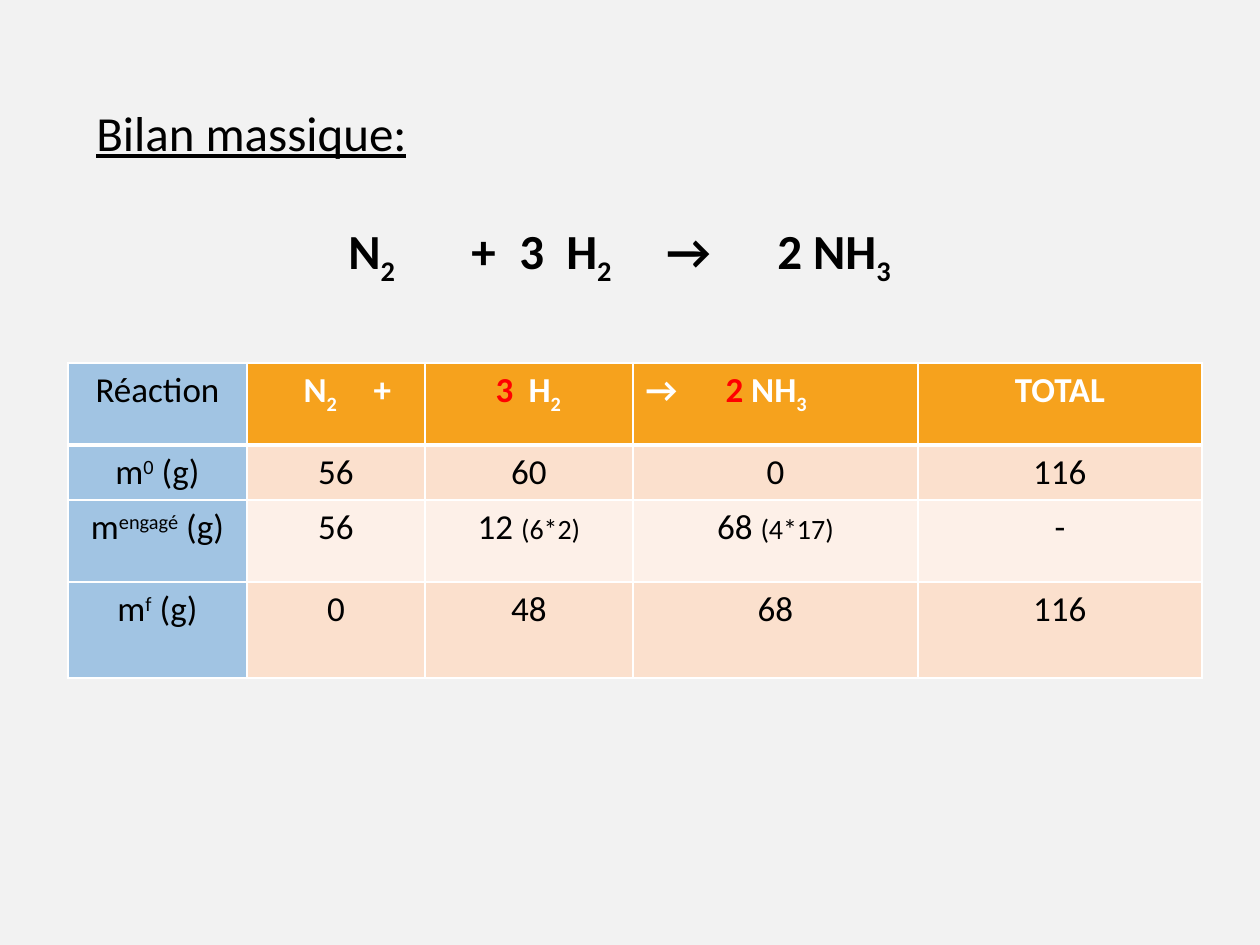
from lxml.etree import SubElement
from pptx import Presentation
from pptx.dml.color import RGBColor
from pptx.enum.text import PP_ALIGN
from pptx.oxml.ns import qn
from pptx.util import Pt

PX = 914400 // 126
FONT = "Calibri"
COLORS = {
    "background": "F2F2F2", "black": "000000", "white": "FFFFFF", "red": "FF0000",
    "label": "A1C4E3", "header": "F6A21D", "odd": "FBE0CD", "even": "FDF0E8",
}
SUB, SUPER = {"baseline": -25}, {"baseline": 30}
RED, SMALL = {"color": "red"}, {"size": 16}

COLUMN_WIDTHS = [179, 178, 208, 285, 284]
ROW_HEIGHTS = [82, 55, 82, 96]

# Each header cell: its runs, then its tab stops in px (none means centred).
HEADER = [
    ([("Réaction", {})], []),
    ([("\tN", {}), ("2", SUB), ("\t+", {})], [44, 114]),
    ([("\t3", RED), ("\tH", {}), ("2", SUB)], [58, 91]),
    ([("→", {}), ("\t2 ", RED), ("NH", {}), ("3", SUB)], [80]),
    ([("TOTAL", {})], []),
]
BODY = [
    [[("m", {}), ("0", SUPER), (" (g)", {})], "56", "60", "0", "116"],
    [[("m", {}), ("engagé", SUPER), (" (g)", {})], "56",
     [("12 ", {}), ("(6*2)", SMALL)], [("68 ", {}), ("(4*17)", SMALL)], "-"],
    [[("m", {}), ("f", SUPER), (" (g)", {})], "0", "48", "68", "116"],
]


def rgb(name):
    return RGBColor.from_string(COLORS[name])


def add_runs(paragraph, runs, size, color="black", bold=False, underline=False):
    """Add (text, style) runs; a style may change size, color or baseline."""
    for text, style in runs:
        run = paragraph.add_run()
        run.text = text
        font = run.font
        font.name = FONT
        font.size = Pt(style.get("size", size))
        font.bold = bold
        font.underline = underline
        font.color.rgb = rgb(style.get("color", color))
        if "baseline" in style:
            font._element.set("baseline", str(style["baseline"] * 1000))


def set_tab_stops(paragraph, stops):
    tab_list = SubElement(paragraph._p.get_or_add_pPr(), qn("a:tabLst"))
    for stop in stops:
        SubElement(tab_list, qn("a:tab"), pos=str(stop * PX), algn="l")


def set_borders(cell, bottom_width):
    """Draw white borders, 1 pt wide except for the bottom one."""
    properties = cell._tc.get_or_add_tcPr()
    for index, side in enumerate(("L", "R", "T", "B")):
        width = bottom_width if side == "B" else 1
        line = properties.makeelement(qn(f"a:ln{side}"), {"w": str(Pt(width))})
        fill = SubElement(line, qn("a:solidFill"))
        SubElement(fill, qn("a:srgbClr"), val=COLORS["white"])
        properties.insert(index, line)


def add_heading(slide, left, top, width, height):
    box = slide.shapes.add_textbox(left * PX, top * PX, width * PX, height * PX)
    frame = box.text_frame
    frame.word_wrap = True
    add_runs(frame.paragraphs[0], [("Bilan massique:", {})], 28, underline=True)

    equation = frame.add_paragraph()
    equation.space_before = Pt(34)
    set_tab_stops(equation, [252, 375, 423, 470, 570, 681])
    add_runs(equation, [("\tN", {}), ("2", SUB), ("\t+\t3\tH", {}), ("2", SUB),
                        ("\t→\t2 NH", {}), ("3", SUB)], 28, bold=True)


def fill_cell(cell, content, fill, color="black", bold=False, stops=(), bottom_width=1):
    cell.fill.solid()
    cell.fill.fore_color.rgb = rgb(fill)
    set_borders(cell, bottom_width)
    paragraph = cell.text_frame.paragraphs[0]
    if stops:
        set_tab_stops(paragraph, stops)
    else:
        paragraph.alignment = PP_ALIGN.CENTER
    runs = [(content, {})] if isinstance(content, str) else content
    add_runs(paragraph, runs, 20, color, bold)


def add_mass_table(slide, left, top):
    frame = slide.shapes.add_table(
        len(ROW_HEIGHTS), len(COLUMN_WIDTHS), left * PX, top * PX,
        sum(COLUMN_WIDTHS) * PX, sum(ROW_HEIGHTS) * PX)
    table = frame.table
    for column, width in zip(table.columns, COLUMN_WIDTHS):
        column.width = width * PX
    for row, height in zip(table.rows, ROW_HEIGHTS):
        row.height = height * PX

    for column, (runs, stops) in enumerate(HEADER):
        is_label = column == 0
        fill_cell(table.cell(0, column), runs, "label" if is_label else "header",
                  "black" if is_label else "white", not is_label, stops, bottom_width=3)
    for row, contents in enumerate(BODY, start=1):
        band = "odd" if row % 2 else "even"
        for column, content in enumerate(contents):
            fill_cell(table.cell(row, column), content, band if column else "label")


def main():
    presentation = Presentation()
    presentation.slide_width = 1260 * PX
    presentation.slide_height = 945 * PX
    slide = presentation.slides.add_slide(presentation.slide_layouts[6])
    slide.background.fill.solid()
    slide.background.fill.fore_color.rgb = rgb("background")
    add_heading(slide, 84, 96, 1101, 229)
    add_mass_table(slide, 68, 363)
    presentation.save("out.pptx")


if __name__ == "__main__":
    main()
